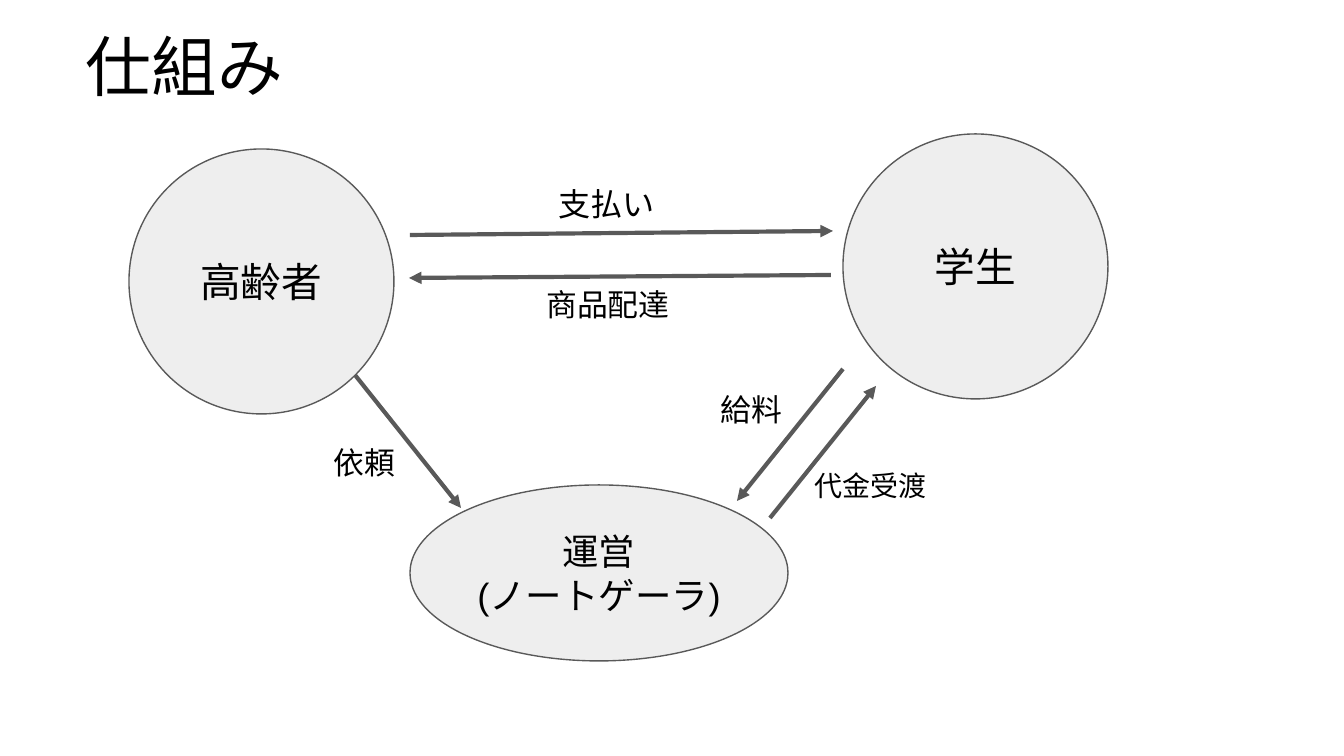
from lxml.etree import SubElement
from pptx import Presentation
from pptx.dml.color import RGBColor
from pptx.enum.shapes import MSO_CONNECTOR as Link, MSO_SHAPE as Kind
from pptx.enum.text import MSO_ANCHOR as Anchor, PP_ALIGN as Align
from pptx.oxml.ns import qn
from pptx.util import Pt

SCALE = 914400 / 134.4
FONT = "Arial"
COLORS = {"ink": "000000", "fill": "EEEEEE", "line": "595959"}


def px(*vals):
    return [round(val * SCALE) for val in vals]


def tone(name):
    return RGBColor.from_string(COLORS[name])


def write(shape, text, size, align=Align.LEFT, anchor=Anchor.TOP, pad=9):
    frame = shape.text_frame
    frame.word_wrap = True
    frame.vertical_anchor = anchor
    frame.margin_left, frame.margin_right = px(9, 9)
    frame.margin_top, frame.margin_bottom = px(pad, pad)
    frame.text = text
    for para in frame.paragraphs:
        para.alignment = align
        para.font.name = FONT
        para.font.size = Pt(size)
        para.font.color.rgb = tone("ink")
    return frame


def add_title(slide, box, text):
    shape = slide.shapes.add_textbox(*px(*box))
    frame = write(shape, text, 35.2, anchor=Anchor.MIDDLE, pad=5)
    frame.paragraphs[0].line_spacing = 0.9


def add_node(slide, box, text, size):
    node = slide.shapes.add_shape(Kind.OVAL, *px(*box))
    node.shadow.inherit = False
    node.fill.solid()
    node.fill.fore_color.rgb = tone("fill")
    node.line.color.rgb = tone("line")
    node.line.width = Pt(0.75)
    write(node, text, size, Align.CENTER, Anchor.MIDDLE)


def add_arrow(slide, ends):
    arrow = slide.shapes.add_connector(Link.STRAIGHT, *px(*ends))
    arrow.line.color.rgb = tone("line")
    arrow.line.width = Pt(2.25)
    SubElement(arrow.line._get_or_add_ln(), qn("a:tailEnd"), type="triangle")
    SubElement(arrow._element.spPr, qn("a:effectLst"))


def add_flow(slide, box):
    left, top, width, height = box
    disc = 265
    nodes = [
        (0, 15, disc, disc, "高齢者", 21.8),
        (width - disc, 0, disc, disc, "学生", 21.8),
        (281, height - 176, 378, 176, "運営\n(ノートゲーラ)", 19.5),
    ]
    arrows = [
        (281, 101, 704, 97),
        (226, 241, 332, 374),
        (702, 141, 280, 144),
        (714, 235, 608, 367),
        (641, 384, 747, 252),
    ]
    labels = [
        (196, 301, 85, 58, "依頼", 16.5, Align.LEFT),
        (378, 143, 202, 58, "商品配達", 16.5, Align.CENTER),
        (390, 41, 176, 59, "支払い", 17.2, Align.CENTER),
        (677, 326, 171, 54, "代金受渡", 15, Align.LEFT),
        (583, 248, 114, 58, "給料", 16.5, Align.LEFT),
    ]
    for x, y, w, h, text, size in nodes:
        add_node(slide, (left + x, top + y, w, h), text, size)
    for x1, y1, x2, y2 in arrows:
        add_arrow(slide, (left + x1, top + y1, left + x2, top + y2))
    for x, y, w, h, text, size, align in labels:
        label = slide.shapes.add_textbox(*px(left + x, top + y, w, h))
        write(label, text, size, align)


def main():
    deck = Presentation()
    deck.slide_width, deck.slide_height = px(1344, 756)
    slide = deck.slides.add_slide(deck.slide_layouts[6])
    add_title(slide, (77, 20, 1159, 101), "仕組み")
    add_flow(slide, (129, 134, 979, 527))
    deck.save("out.pptx")


if __name__ == "__main__":
    main()
